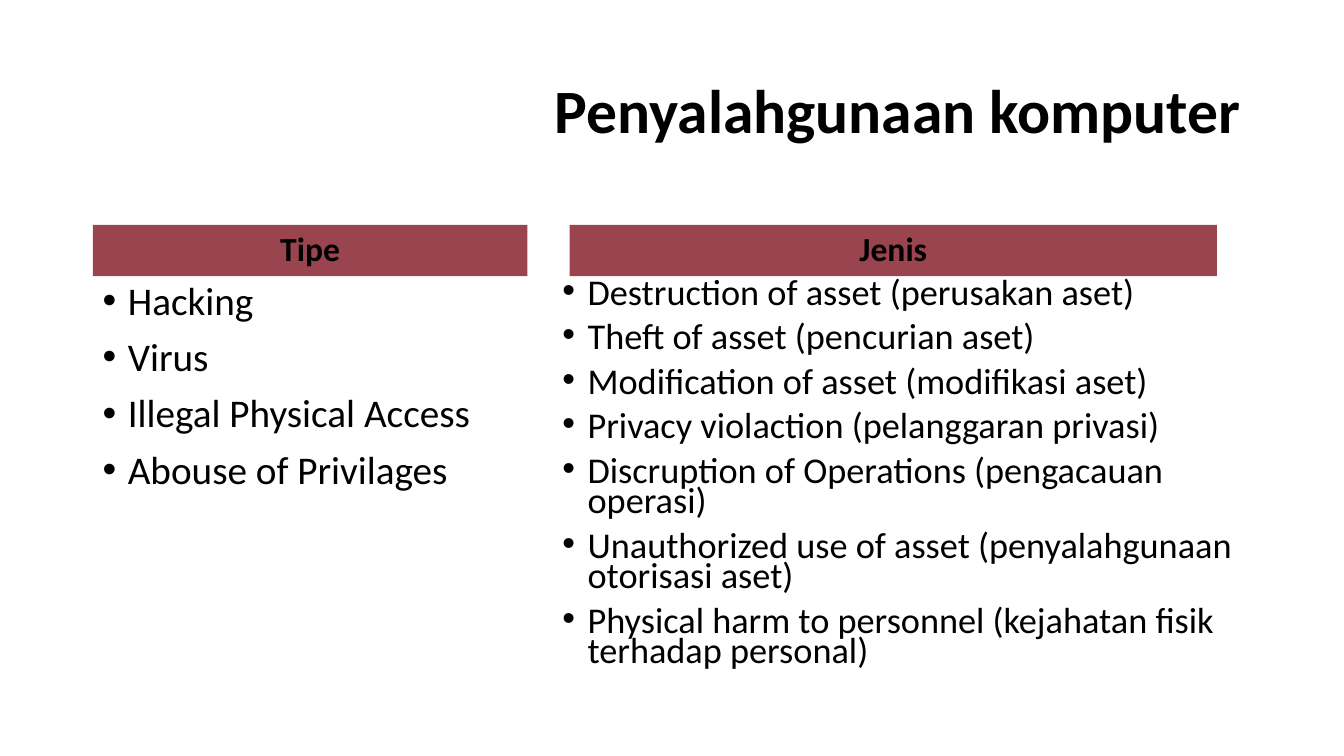
from lxml import etree
from pptx import Presentation
from pptx.dml.color import RGBColor
from pptx.enum.shapes import MSO_SHAPE
from pptx.enum.text import MSO_ANCHOR, PP_ALIGN
from pptx.oxml.ns import qn
from pptx.util import Inches, Pt

BLACK = RGBColor(0x00, 0x00, 0x00)
MAROON = RGBColor(0x9A, 0x44, 0x50)
RECTANGLE = MSO_SHAPE.RECTANGLE
MIDDLE = MSO_ANCHOR.MIDDLE
CENTER, RIGHT = PP_ALIGN.CENTER, PP_ALIGN.RIGHT

FONT = "Calibri"
SLIDE_WIDTH, SLIDE_HEIGHT = 13.33, 7.5
MARGIN = 0.92
CONTENT_WIDTH = SLIDE_WIDTH - 2 * MARGIN
HEADER_TOP, HEADER_HEIGHT = 2.23, 0.51
LIST_TOP, LIST_HEIGHT = HEADER_TOP + HEADER_HEIGHT, 4.03
BULLET_INDENT = 0.25

# Header text, header left and width, list left and width, size, line spacing, items
COLUMNS = [
    ("Tipe", (MARGIN, 4.31), (MARGIN, 5.64), 28, 0.9, [
        "Hacking",
        "Virus",
        "Illegal Physical Access",
        "Abouse of Privilages",
    ]),
    ("Jenis", (5.65, 6.42), (5.48, 6.94), 25.9, 0.7, [
        "Destruction of asset (perusakan aset)",
        "Theft of asset (pencurian aset)",
        "Modification of asset (modifikasi aset)",
        "Privacy violaction (pelanggaran privasi)",
        "Discruption of Operations (pengacauan operasi)",
        "Unauthorized use of asset (penyalahgunaan otorisasi aset)",
        "Physical harm to personnel (kejahatan fisik terhadap personal)",
    ]),
]


def format_paragraph(para, size, bold=False, align=None, line_spacing=0.9):
    para.alignment = align
    para.line_spacing = line_spacing
    for span in para.runs:
        span.font.name = FONT
        span.font.size = Pt(size)
        span.font.bold = bold
        span.font.color.rgb = BLACK


def add_text_box(page, left, top, width, height):
    box = page.shapes.add_textbox(
        Inches(left), Inches(top), Inches(width), Inches(height))
    box.text_frame.word_wrap = True
    return box.text_frame


def add_title(page, text):
    frame = add_text_box(page, MARGIN, 0.4, CONTENT_WIDTH, 1.45)
    frame.vertical_anchor = MIDDLE
    frame.text = text
    format_paragraph(frame.paragraphs[0], 44, bold=True, align=RIGHT)


def add_header(page, text, left, width):
    bar = page.shapes.add_shape(
        RECTANGLE, Inches(left), Inches(HEADER_TOP),
        Inches(width), Inches(HEADER_HEIGHT))
    bar.shadow.inherit = False
    bar.fill.solid()
    bar.fill.fore_color.rgb = MAROON
    bar.line.fill.background()
    bar.text_frame.vertical_anchor = MIDDLE
    bar.text_frame.text = text
    format_paragraph(bar.text_frame.paragraphs[0], 24, bold=True, align=CENTER)


def add_bullet(para):
    """Give the paragraph a round bullet with a hanging indent."""
    properties = para._p.get_or_add_pPr()
    properties.set("marL", str(Inches(BULLET_INDENT)))
    properties.set("indent", str(-Inches(BULLET_INDENT)))
    etree.SubElement(properties, qn("a:buFont"), typeface="Arial")
    etree.SubElement(properties, qn("a:buChar"), char="•")


def add_bullet_list(page, items, left, width, size, line_spacing):
    frame = add_text_box(page, left, LIST_TOP, width, LIST_HEIGHT)
    frame.text = "\n".join(items)
    for index, para in enumerate(frame.paragraphs):
        add_bullet(para)
        format_paragraph(para, size, line_spacing=line_spacing)
        if index:
            para.space_before = Pt(10)


def main():
    deck = Presentation()
    deck.slide_width = Inches(SLIDE_WIDTH)
    deck.slide_height = Inches(SLIDE_HEIGHT)
    page = deck.slides.add_slide(deck.slide_layouts[6])
    add_title(page, "Penyalahgunaan komputer")
    for header, header_span, list_span, size, line_spacing, items in COLUMNS:
        add_header(page, header, *header_span)
        add_bullet_list(page, items, *list_span, size, line_spacing)
    deck.save("out.pptx")


if __name__ == "__main__":
    main()
